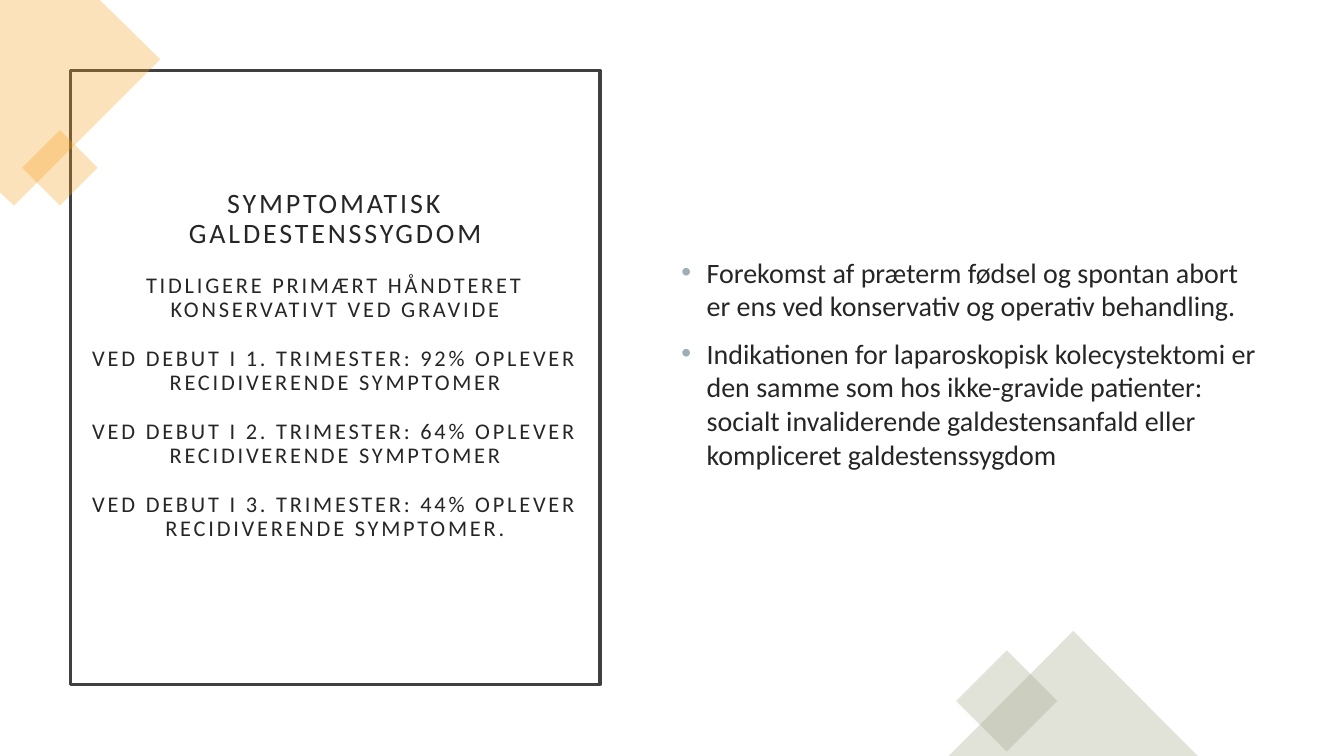
from lxml import etree
from pptx import Presentation
from pptx.dml.color import RGBColor
from pptx.enum.shapes import MSO_SHAPE
from pptx.enum.text import MSO_ANCHOR, MSO_AUTO_SIZE, PP_ALIGN
from pptx.oxml.ns import qn
from pptx.util import Inches, Pt

RECTANGLE = MSO_SHAPE.RECTANGLE
TRIANGLE = MSO_SHAPE.ISOSCELES_TRIANGLE
MIDDLE = MSO_ANCHOR.MIDDLE
NO_FIT = MSO_AUTO_SIZE.NONE
CENTER = PP_ALIGN.CENTER

FONT = "Calibri"
WHITE, PALE, INK, FRAME = "FFFFFF", "F2F2F2", "262626", "404040"
ORANGE, SAGE, BULLET = "F6A21D", "9CA383", "9BAFB5"
PAGE_WIDTH, PAGE_HEIGHT = 13.33, 7.5

HEADING = "SYMPTOMATISK GALDESTENSSYGDOM"
FINDINGS = ["TIDLIGERE PRIMÆRT HÅNDTERET KONSERVATIVT VED GRAVIDE"] + [
    f"VED DEBUT I {number}. TRIMESTER: {share}% OPLEVER RECIDIVERENDE SYMPTOMER{end}"
    for number, share, end in ((1, 92, ""), (2, 64, ""), (3, 44, "."))
]
POINTS = [
    "Forekomst af præterm fødsel og spontan abort er ens ved konservativ "
    "og operativ behandling.",
    "Indikationen for laparoskopisk kolecystektomi er den samme som hos "
    "ikke-gravide patienter: socialt invaliderende galdestensanfald eller "
    "kompliceret galdestenssygdom",
]


def color(value):
    return RGBColor.from_string(value)


def inches(*lengths):
    return [Inches(length) for length in lengths]


def paint(shape, fill, alpha=None):
    """Flat fill without line or shadow, alpha in percent."""
    shape.shadow.inherit = False
    shape.line.fill.background()
    shape.fill.solid()
    shape.fill.fore_color.rgb = color(fill)
    if alpha is not None:
        tone = shape.fill._xPr.find(qn("a:solidFill"))[0]
        etree.SubElement(tone, qn("a:alpha")).set("val", str(alpha * 1000))


def set_frame(frame, left, top, right, bottom):
    frame.word_wrap = True
    frame.auto_size = NO_FIT
    frame.vertical_anchor = MIDDLE
    frame.margin_left, frame.margin_top = inches(left, top)
    frame.margin_right, frame.margin_bottom = inches(right, bottom)


def style(span, size):
    span.font.name = FONT
    span.font.size = Pt(size)
    span.font.color.rgb = color(INK)


def add_backdrop(page):
    page.background.fill.solid()
    page.background.fill.fore_color.rgb = color(PALE)
    panel = page.shapes.add_shape(RECTANGLE, *inches(0, 0, PAGE_WIDTH, PAGE_HEIGHT))
    paint(panel, WHITE)
    # Behind the title
    page.shapes.title._element.addprevious(panel._element)


def fill_title(page, left, top, width, height):
    title = page.shapes.title
    title.left, title.top, title.width, title.height = inches(left, top, width, height)
    title.fill.solid()
    title.fill.fore_color.rgb = color(WHITE)
    title.line.color.rgb = color(FRAME)
    title.line.width = Pt(2.5)
    frame = title.text_frame
    frame.text = "\n".join([HEADING, *FINDINGS])
    set_frame(frame, 0.2, 0.2, 0.2, 0.44)
    for index, para in enumerate(frame.paragraphs):
        para.alignment = CENTER
        para.line_spacing = 0.9
        para.space_before = Pt(17.5 if index else 0)
        for span in para.runs:
            style(span, 16 if index else 20)
            span.font._element.set("spc", "200")


def add_points(page, left, top, width, height):
    box = page.shapes.add_textbox(*inches(left, top, width, height))
    frame = box.text_frame
    frame.text = "\n".join(POINTS)
    set_frame(frame, 0.1, 0.05, 0.1, 0.34)
    for index, para in enumerate(frame.paragraphs):
        para.space_before = Pt(10 if index else 0)
        settings = para._p.get_or_add_pPr()
        settings.set("marL", str(Inches(0.25)))
        settings.set("indent", str(Inches(-0.25)))
        tint = etree.SubElement(settings, qn("a:buClr"))
        etree.SubElement(tint, qn("a:srgbClr")).set("val", BULLET)
        etree.SubElement(settings, qn("a:buFont")).set("typeface", "Arial")
        etree.SubElement(settings, qn("a:buChar")).set("char", "•")
        for span in para.runs:
            style(span, 20)


def add_diamond(page, left, top, side, fill):
    diamond = page.shapes.add_shape(RECTANGLE, *inches(left, top, side, side))
    diamond.rotation = 45
    paint(diamond, fill, 30)


def add_top_corner(page, left, top):
    """Large clipped diamond with a small one over its lower edge."""
    outline = [(0, 0), (0.99, 0), (1.59, 0.59), (0.14, 2.04), (0, 1.91)]
    points = [inches(left + x, top + y) for x, y in outline]
    builder = page.shapes.build_freeform(*points[0])
    builder.add_line_segments(points[1:], close=True)
    paint(builder.convert_to_shape(), ORANGE, 30)
    add_diamond(page, left + 0.33, top + 1.4, 0.53, ORANGE)


def add_bottom_corner(page, left, top, width, height):
    """Triangle on the page edge with a diamond over its left side."""
    add_diamond(page, left + 0.22, top + 0.34, 0.71, SAGE)
    triangle = page.shapes.add_shape(TRIANGLE, *inches(left, top, width, height))
    paint(triangle, SAGE, 30)


def main():
    deck = Presentation()
    deck.slide_width, deck.slide_height = inches(PAGE_WIDTH, PAGE_HEIGHT)
    page = deck.slides.add_slide(deck.slide_layouts.get_by_name("Title Only"))
    add_backdrop(page)
    fill_title(page, 0.7, 0.7, 5.25, 6.09)
    add_top_corner(page, 0, 0)
    add_points(page, 6.66, 0.7, 5.97, 6.09)
    add_bottom_corner(page, 9.41, 6.26, 2.47, 1.24)
    deck.save("out.pptx")


if __name__ == "__main__":
    main()
